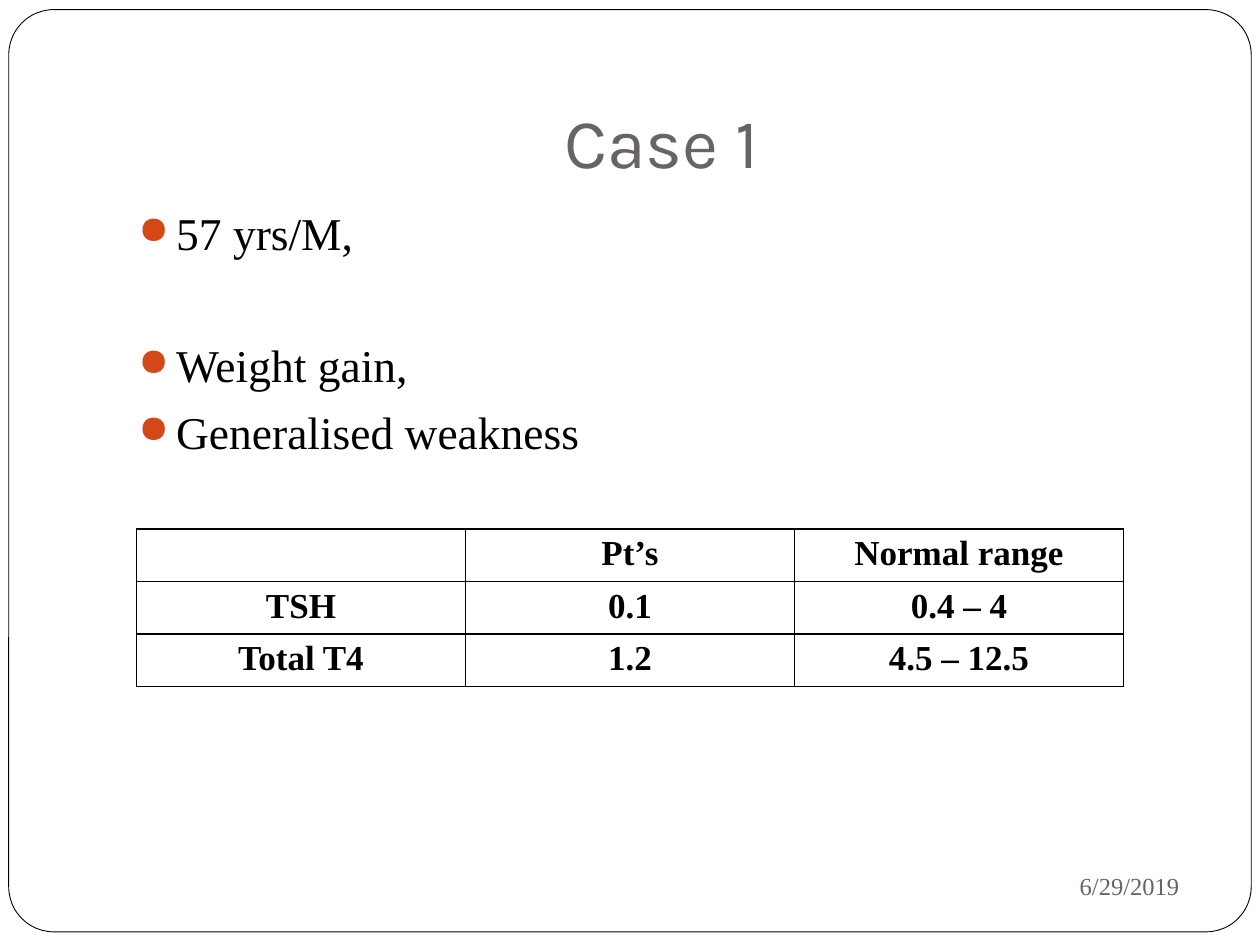
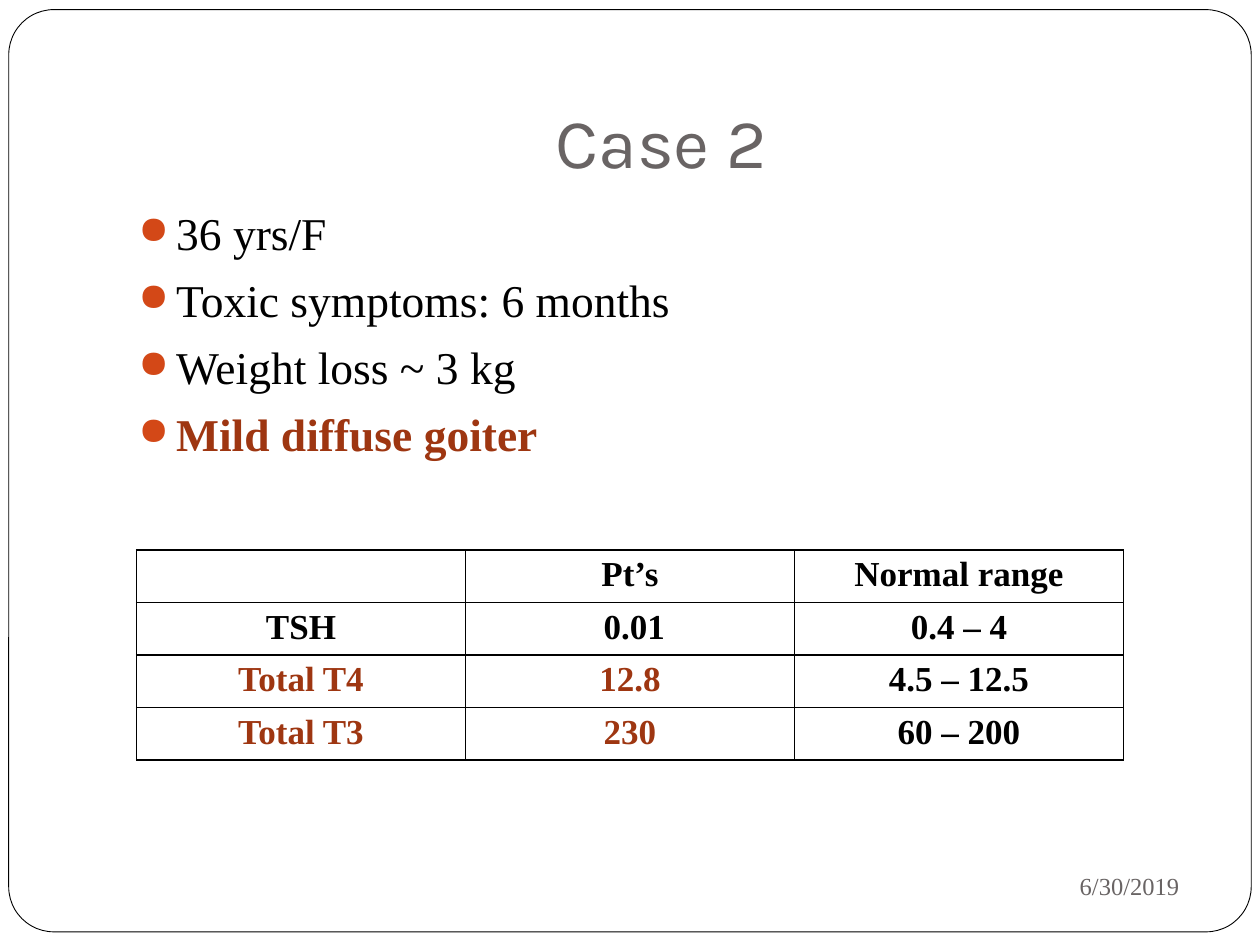
from pptx import Presentation
from pptx.dml.color import RGBColor
from pptx.enum.shapes import MSO_SHAPE
from pptx.enum.text import MSO_ANCHOR, PP_ALIGN
from pptx.oxml import parse_xml
from pptx.oxml.ns import nsdecls
from pptx.util import Pt

# Content: a bullet is (text, marked, space before); a row is (cells, marked count)
HEAD = (("", "Pt’s", "Normal range"), 0)
GAP = 7
CASES = [
    {
        "title": "Case 1",
        "date": "6/29/2019",
        "points": [
            ("57 yrs/M,", False, GAP),
            ("Weight gain,", False, 44),
            ("Generalised weakness", False, GAP),
        ],
        "top": 302.4,
        "rows": [
            HEAD,
            (("TSH", "0.1", "0.4 – 4"), 0),
            (("Total T4", "1.2", "4.5 – 12.5"), 0),
        ],
    },
    {
        "title": "Case 2",
        "date": "6/30/2019",
        "points": [
            ("36 yrs/F", False, GAP),
            ("Toxic symptoms: 6 months", False, GAP),
            ("Weight loss ~ 3 kg", False, GAP),
            ("Mild diffuse goiter", True, GAP),
        ],
        "top": 314.4,
        "rows": [
            HEAD,
            (("TSH", " 0.01", "0.4 – 4"), 0),
            (("Total T4", "12.8", "4.5 – 12.5"), 2),
            (("Total T3", "230", "60 – 200"), 2),
        ],
    },
]

# Shared style
HUES = {"text": "000000", "soft": "696464", "mark": "9E3611",
        "dot": "D34817", "back": "FFFFFF"}
SERIF, SANS = "Times New Roman", "Karla"
WIDE, HIGH = 720, 540
COL, ROW = 188, 29.45


def rgb(key):
    return RGBColor.from_string(HUES[key])


def style(para, size, hue="text", face=SERIF, bold=False, align=None):
    font = para.font
    font.size, font.name, font.bold = Pt(size), face, bold
    font.color.rgb = rgb(hue)
    para.alignment = align


def place(shape, *box):
    shape.left, shape.top, shape.width, shape.height = map(Pt, box)


def add_text(slide, *box):
    frame = slide.shapes.add_textbox(*map(Pt, box)).text_frame
    frame.word_wrap = True
    return frame


def add_frame(slide):
    """Draw the rounded border once and move it to the shared layout."""
    shape = slide.shapes.add_shape(
        MSO_SHAPE.ROUNDED_RECTANGLE, Pt(5), Pt(5.5), Pt(710), Pt(527))
    shape.adjustments[0] = 0.049
    shape.shadow.inherit = False
    shape.fill.solid()
    shape.fill.fore_color.rgb = rgb("back")
    shape.line.color.rgb = rgb("text")
    shape.line.width = Pt(0.5)
    tree = slide.slide_layout.placeholders[0].element.getparent()
    tree.insert(2, shape.element)


def add_title(slide, text):
    title = slide.shapes.title
    place(title, 72, 21.6, 612, 90)
    frame = title.text_frame
    frame.text = text
    frame.vertical_anchor = MSO_ANCHOR.BOTTOM
    frame.margin_bottom = Pt(7.2)
    style(frame.paragraphs[0], 40, "soft", SANS, align=PP_ALIGN.CENTER)


def add_date(slide, text):
    frame = add_text(slide, 486, 487.5, 195, 37.5)
    frame.text = text
    frame.vertical_anchor = MSO_ANCHOR.MIDDLE
    style(frame.paragraphs[0], 14, "soft", align=PP_ALIGN.RIGHT)


def add_bullet(para):
    props = para._p.get_or_add_pPr()
    props.set("marL", str(Pt(21.6)))
    props.set("indent", str(-Pt(21.6)))
    for part in (f'<a:buClr {{}}><a:srgbClr val="{HUES["dot"]}"/></a:buClr>',
                 '<a:buSzPct {} val="85000"/>',
                 '<a:buChar {} char="●"/>'):
        props.insert_element_before(
            parse_xml(part.format(nsdecls("a"))), "a:tabLst", "a:defRPr")


def add_points(slide, points):
    frame = add_text(slide, 72, 113.8, 612, 360)
    for i, (text, marked, space) in enumerate(points):
        para = frame.add_paragraph() if i else frame.paragraphs[0]
        para.text = text
        para.space_before = Pt(space)
        style(para, 26, "mark" if marked else "text", bold=marked)
        add_bullet(para)


def add_border(cell):
    props = cell._tc.get_or_add_tcPr()
    for i, side in enumerate(("lnL", "lnR", "lnT", "lnB")):
        props.insert(i, parse_xml(
            f'<a:{side} {nsdecls("a")} w="{Pt(1)}"><a:solidFill>'
            f'<a:srgbClr val="{HUES["text"]}"/></a:solidFill></a:{side}>'))


def add_grid(slide, top, rows):
    count = len(HEAD[0])
    grid = slide.shapes.add_table(
        len(rows), count, Pt(78), Pt(top),
        Pt(COL * count), Pt(ROW * len(rows))).table
    for col in grid.columns:
        col.width = Pt(COL)
    for i, (texts, marks) in enumerate(rows):
        grid.rows[i].height = Pt(ROW)
        for j, text in enumerate(texts):
            cell = grid.cell(i, j)
            cell.text = text
            cell.margin_top = cell.margin_bottom = Pt(3)
            cell.fill.solid()
            cell.fill.fore_color.rgb = rgb("back")
            style(cell.text_frame.paragraphs[0], 20,
                  "mark" if j < marks else "text",
                  bold=True, align=PP_ALIGN.CENTER)
            add_border(cell)


def main():
    deck = Presentation()
    deck.slide_width, deck.slide_height = Pt(WIDE), Pt(HIGH)
    layout = deck.slide_layouts[5]
    for i, case in enumerate(CASES):
        slide = deck.slides.add_slide(layout)
        if i == 0:
            add_frame(slide)
        add_title(slide, case["title"])
        add_date(slide, case["date"])
        add_points(slide, case["points"])
        add_grid(slide, case["top"], case["rows"])
    deck.save("out.pptx")


if __name__ == "__main__":
    main()
